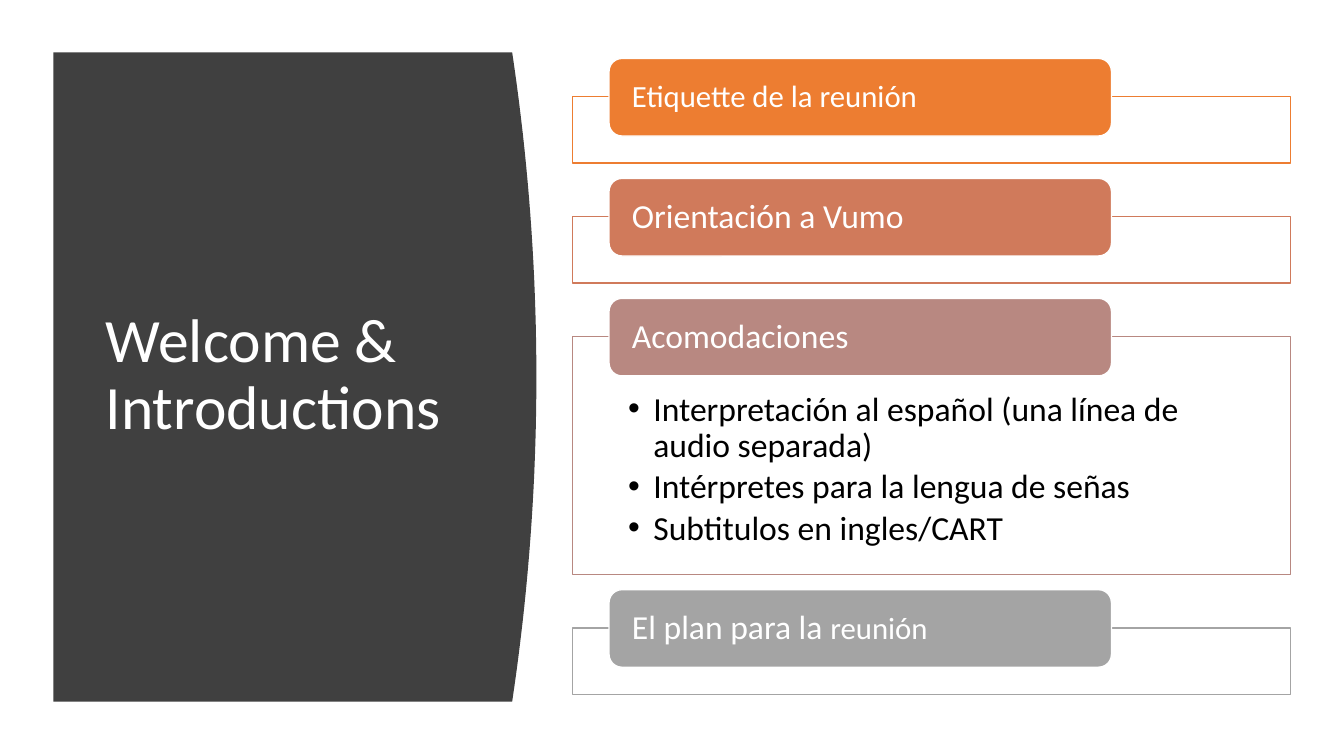
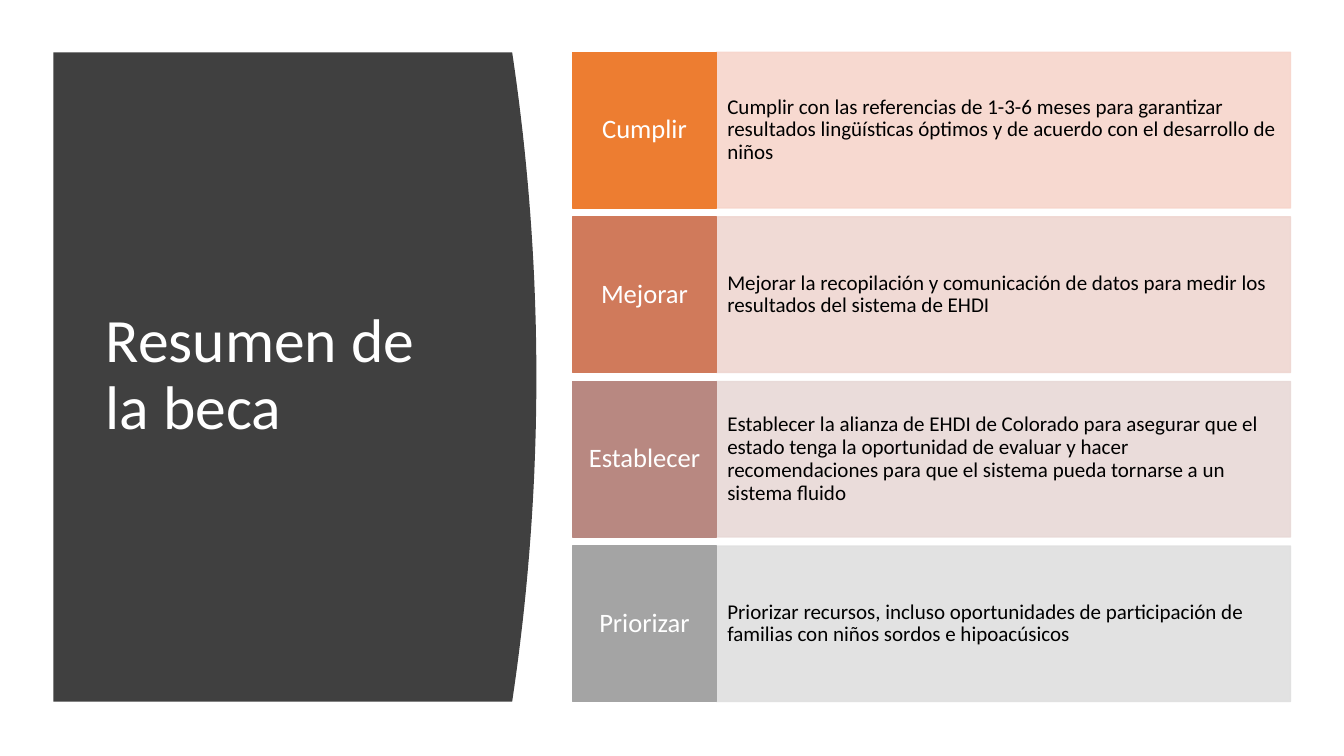
from lxml import etree
from pptx import Presentation
from pptx import util as u
from pptx.dml import color
from pptx.enum import shapes, text
from pptx.oxml import ns

FONT = "Calibri"
WHITE, BLACK, DARK = "FFFFFF", "000000", "404040"
HUES = ["ED7D31", "D07A5B", "B88881", "A4A4A4"]
TINTS = ["F7D5CB", "EFD6D1", "E8D9D7", "DFDFDF"]
SIDE = (0.53, 0.52, 4.79, 6.44)
MAIN = (5.68, 0.52, 7.12, 6.44)

PANELS = [
    ([("Etiquette de la reunión", 22)], []),
    ([("Orientación a Vumo", 24)], []),
    ([("Acomodaciones", 24)], [
        "Interpretación al español (una línea de audio separada)",
        "Intérpretes para la lengua de señas",
        "Subtitulos en ingles/CART",
    ]),
    ([("El plan para la ", 24), ("reunión", 22)], []),
]
GOALS = [
    ("Cumplir", "Cumplir con las referencias de 1-3-6 meses para garantizar "
     "resultados lingüísticas óptimos y de acuerdo con el desarrollo de niños"),
    ("Mejorar", "Mejorar la recopilación y comunicación de datos para medir "
     "los resultados del sistema de EHDI"),
    ("Establecer", "Establecer la alianza de EHDI de Colorado para asegurar que "
     "el estado tenga la oportunidad de evaluar y hacer recomendaciones para "
     "que el sistema pueda tornarse a un sistema fluido"),
    ("Priorizar", "Priorizar recursos, incluso oportunidades de participación "
     "de familias con niños sordos e hipoacúsicos"),
]


def tint(fill, hue, alpha=100):
    fill.solid()
    fill.fore_color.rgb = color.RGBColor.from_string(hue)
    if alpha < 100:
        for clr in fill._xPr.iter(ns.qn("a:srgbClr")):
            etree.SubElement(clr, ns.qn("a:alpha"), val=str(alpha * 1000))


def block(slide, kind, box, hue, edge, alpha=100, rim=100):
    shape = slide.shapes.add_shape(kind, *map(u.Inches, box))
    shape.shadow.inherit = False
    tint(shape.fill, hue, alpha)
    tint(shape.line.fill, edge, rim)
    shape.line.width = u.Pt(1)
    return shape


def frame(shape, pads, anchor=text.MSO_ANCHOR.MIDDLE):
    body = shape.text_frame
    body.word_wrap = True
    body.vertical_anchor = anchor
    body.margin_left = body.margin_right = u.Inches(pads[0])
    body.margin_top, body.margin_bottom = map(u.Inches, pads[1:])
    return body


def write(para, runs, hue, align=text.PP_ALIGN.LEFT):
    para.alignment = align
    para.line_spacing = 0.9
    for words, size in runs:
        run = para.add_run()
        run.text = words
        run.font.name = FONT
        run.font.size = u.Pt(size)
        tint(run.font.fill, hue)


def dot(para):
    props = para._p.get_or_add_pPr()
    inch = u.Inches(0.25)
    props.set("marL", str(inch))
    props.set("indent", str(-inch))
    etree.SubElement(props, ns.qn("a:buFont"), typeface="Arial")
    etree.SubElement(props, ns.qn("a:buChar"), char="•")


def side(slide, box, title):
    left, top, width, height = box
    bulge, steps = 0.24, 40
    edge = left + width - bulge
    curve = []
    for i in range(steps + 1):
        t = i / steps
        curve.append((edge + bulge * 4 * t * (1 - t), top + height * t))
    points = [(u.Inches(x), u.Inches(y))
              for x, y in [(left, top), *curve, (left, top + height)]]
    path = slide.shapes.build_freeform(*points[0])
    path.add_line_segments(points[1:], close=True)
    shape = path.convert_to_shape()
    shape.shadow.inherit = False
    tint(shape.fill, DARK)
    shape.line.fill.background()
    label = slide.shapes.add_textbox(*map(u.Inches, (
        left + 0.42, top + 0.59, 3.74, height - 1.2)))
    body = frame(label, (0.1, 0.05, 0.05))
    write(body.paragraphs[0], [(title, 44)], WHITE)


def panel(slide, box, hue, head, notes):
    left, top, width, height = box
    rect = block(slide, shapes.MSO_SHAPE.RECTANGLE, box, WHITE, hue, 90)
    if notes:
        body = frame(rect, (0.55, 0.55, 0.19), text.MSO_ANCHOR.TOP)
        for i, note in enumerate(notes):
            para = body.add_paragraph() if i else body.paragraphs[0]
            write(para, [(note, 24)], BLACK)
            para.space_before = u.Pt(3.6 if i else 0)
            dot(para)
    pill = block(slide, shapes.MSO_SHAPE.ROUNDED_RECTANGLE,
                 (left + 0.36, top - 0.38, width * 0.7, 0.77), hue, WHITE)
    write(frame(pill, (0.19, 0, 0)).paragraphs[0], head, WHITE)


def agenda(slide, box):
    left, top, width, _ = box
    top += 0.44
    for (head, notes), hue in zip(PANELS, HUES):
        height = 2.36 if notes else 0.66
        panel(slide, (left, top, width, height), hue, head, notes)
        top += height + 0.53


def goals(slide, box):
    left, top, width, height = box
    gap, tab = 0.09, width / 5
    tall = (height - gap * (len(GOALS) - 1)) / len(GOALS)
    kind = shapes.MSO_SHAPE.RECTANGLE
    for i, (name, words) in enumerate(GOALS):
        y = top + i * (tall + gap)
        band = block(slide, kind, (left + tab, y, width - tab, tall),
                     TINTS[i], TINTS[i], 90, 90)
        write(frame(band, (0.11, 0.39, 0.39)).paragraphs[0],
              [(words, 15)], BLACK)
        tile = block(slide, kind, (left, y, tab, tall), HUES[i], HUES[i])
        write(frame(tile, (0.08, 0.15, 0.15)).paragraphs[0],
              [(name, 19)], WHITE, text.PP_ALIGN.CENTER)


def main():
    deck = Presentation()
    deck.slide_width, deck.slide_height = u.Inches(13.33), u.Inches(7.5)
    for title, fill in [("Welcome & Introductions", agenda),
                        ("Resumen de la beca", goals)]:
        slide = deck.slides.add_slide(deck.slide_layouts[6])
        side(slide, SIDE, title)
        fill(slide, MAIN)
    deck.save("out.pptx")


if __name__ == "__main__":
    main()
